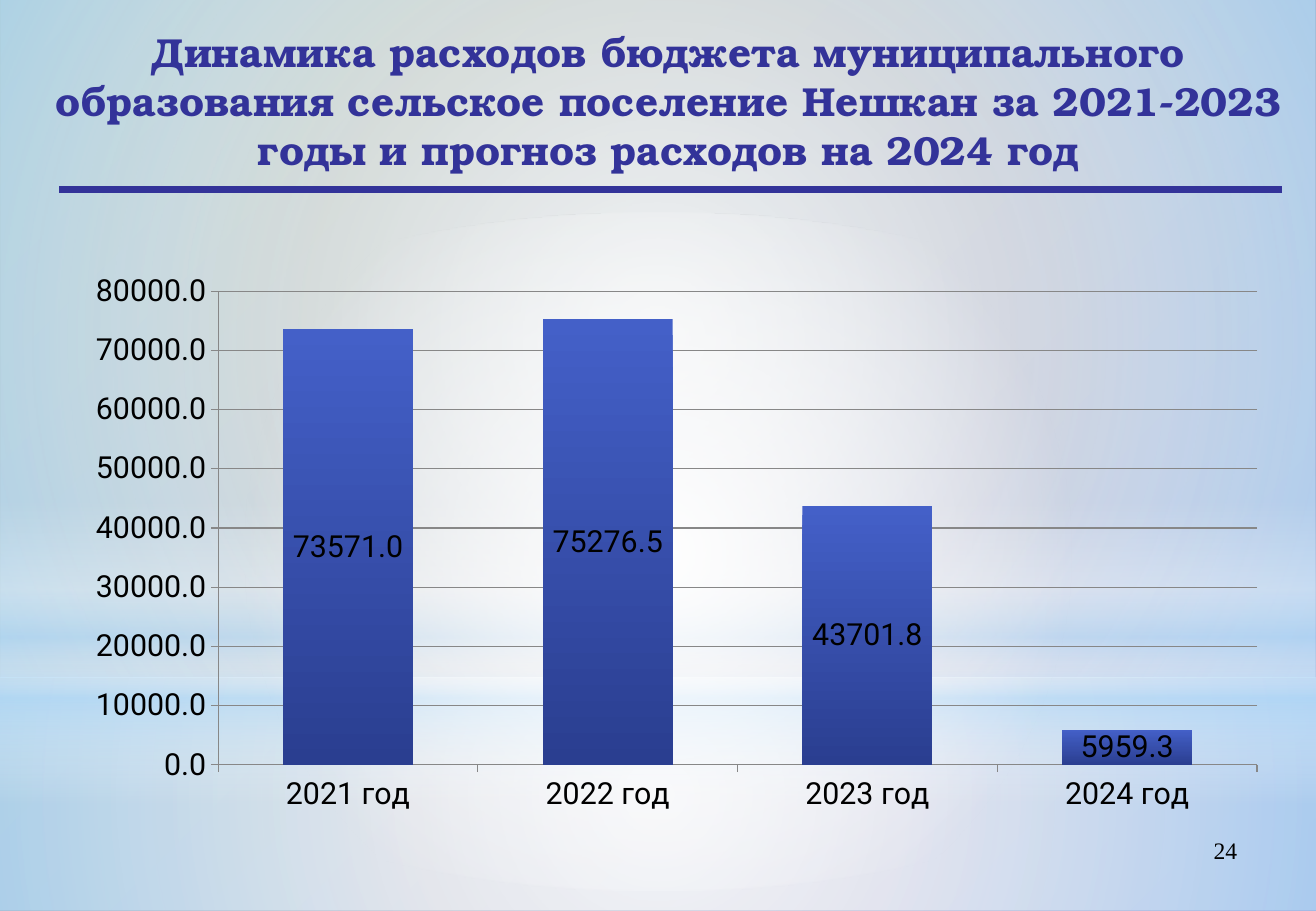
from lxml import etree
from pptx import Presentation
from pptx.chart.data import CategoryChartData
from pptx.dml.color import RGBColor
from pptx.enum.chart import XL_CHART_TYPE, XL_LABEL_POSITION, XL_TICK_MARK
from pptx.enum.shapes import MSO_CONNECTOR, MSO_SHAPE
from pptx.enum.text import MSO_ANCHOR, PP_ALIGN
from pptx.oxml import parse_xml
from pptx.oxml.ns import qn
from pptx.util import Inches, Pt

RECT, OVAL = MSO_SHAPE.RECTANGLE, MSO_SHAPE.OVAL
STRAIGHT = MSO_CONNECTOR.STRAIGHT
STACKED = XL_CHART_TYPE.COLUMN_STACKED
LABEL_CENTER = XL_LABEL_POSITION.CENTER
TICK_OUT, TICK_NONE = XL_TICK_MARK.OUTSIDE, XL_TICK_MARK.NONE
CENTER, RIGHT = PP_ALIGN.CENTER, PP_ALIGN.RIGHT
TOP, MIDDLE = MSO_ANCHOR.TOP, MSO_ANCHOR.MIDDLE

COLORS = {
    "title": "333399", "text": "000000", "grid": "878787",
    "bar_top": "4460C8", "bar_bottom": "2A3E90",
    "back_start": "96AB94", "back_end": "8488C4",
    "white": "FFFFFF", "sky": "B4DCFA",
}
RADIAL = ('<a:path path="circle"><a:fillToRect l="50000" t="50000" '
          'r="50000" b="50000"/></a:path>')
VERTICAL = '<a:lin ang="5400000" scaled="1"/>'
DRAWING_NS = "http://schemas.openxmlformats.org/drawingml/2006/main"


def rgb(name):
    return RGBColor.from_string(COLORS[name])


class BudgetSlide:
    """Holds the slide and draws its elements in one style."""

    def __init__(self, deck):
        self.slide = deck.slides.add_slide(deck.slide_layouts[6])
        self.shapes = self.slide.shapes

    def two_tone(self, fill, start, end, angle):
        fill.gradient()
        fill.gradient_angle = angle
        for stop, name in zip(fill.gradient_stops, (start, end)):
            stop.color.rgb = rgb(name)

    def glow(self, kind, box, stops, direction):
        layer = self.shapes.add_shape(kind, *map(Inches, box))
        layer.shadow.inherit = False
        layer.line.fill.background()
        layer.fill.gradient()
        stop_xml = "".join(
            f'<a:gs pos="{place * 1000}"><a:srgbClr val="{COLORS[name]}">'
            f'<a:alpha val="{opacity * 1000}"/></a:srgbClr></a:gs>'
            for place, name, opacity in stops)
        gradient = parse_xml(
            f'<a:gradFill xmlns:a="{DRAWING_NS}" rotWithShape="1">'
            f'<a:gsLst>{stop_xml}</a:gsLst>{direction}</a:gradFill>')
        default = next(layer.element.iter(qn("a:gradFill")))
        default.getparent().replace(default, gradient)

    def text(self, words, box, font, size, color, align, anchor, bold=False):
        frame = self.shapes.add_textbox(*map(Inches, box)).text_frame
        frame.word_wrap = True
        frame.vertical_anchor = anchor
        paragraph = frame.paragraphs[0]
        paragraph.alignment = align
        run = paragraph.add_run()
        run.text = words
        run.font.name, run.font.size, run.font.bold = font, Pt(size), bold
        run.font.color.rgb = rgb(color)

    def rule(self, start, end, color, weight):
        rule = self.shapes.add_connector(STRAIGHT, *map(Inches, start + end))
        rule.line.color.rgb = rgb(color)
        rule.line.width = Pt(weight)
        etree.SubElement(rule.element.spPr, qn("a:effectLst"))

    def columns(self, box, spending, plot_area):
        data = CategoryChartData(number_format="0.0")
        data.categories = list(spending)
        data.add_series("Расходы", list(spending.values()))
        chart = self.shapes.add_chart(STACKED, *map(Inches, box), data).chart
        chart.has_legend = chart.has_title = False
        chart.font.name, chart.font.size = "Roboto", Pt(18)
        chart.font.color.rgb = rgb("text")

        for axis in (chart.category_axis, chart.value_axis):
            axis.major_tick_mark = TICK_OUT
            axis.minor_tick_mark = TICK_NONE
            self.thin(axis.format.line)
        amounts = chart.value_axis
        amounts.minimum_scale, amounts.maximum_scale = 0, 80000
        amounts.major_unit = 10000
        amounts.tick_labels.number_format = "0.0"
        amounts.tick_labels.number_format_is_linked = False
        amounts.has_major_gridlines = True
        self.thin(amounts.major_gridlines.format.line)

        plot = chart.plots[0]
        plot.vary_by_categories = False
        plot.gap_width = plot.overlap = 100
        self.two_tone(plot.series[0].format.fill, "bar_top", "bar_bottom", 270)
        plot.has_data_labels = True
        labels = plot.data_labels
        labels.show_value = True
        labels.number_format, labels.number_format_is_linked = "0.0", False
        labels.position = LABEL_CENTER
        self.place_plot(amounts, plot_area)

    def thin(self, line):
        line.color.rgb = rgb("grid")
        line.width = Pt(0.75)

    def place_plot(self, axis, plot_area):
        area = next(axis.format.line.fill and axis._element.iterancestors(qn("c:plotArea")))
        for old in area.findall(qn("c:layout")):
            area.remove(old)
        layout = etree.Element(qn("c:layout"))
        area.insert(0, layout)
        manual = etree.SubElement(layout, qn("c:manualLayout"))
        settings = [("layoutTarget", "inner"), ("xMode", "edge"), ("yMode", "edge")]
        for tag, value in settings + list(zip("xywh", plot_area)):
            etree.SubElement(manual, qn(f"c:{tag}")).set("val", str(value))


def main():
    deck = Presentation()
    deck.slide_width, deck.slide_height = Inches(10.84), Inches(7.5)
    page = BudgetSlide(deck)

    page.two_tone(page.slide.background.fill, "back_start", "back_end", 315)
    page.glow(RECT, (0, 5.58, 10.84, 1.92),
              [(0, "white", 91), (37, "white", 76), (100, "sky", 79)], RADIAL)
    page.glow(RECT, (0, 0, 10.84, 5.58),
              [(0, "white", 89), (48, "white", 62), (100, "sky", 79)], RADIAL)
    page.glow(RECT, (0, 4.12, 10.84, 2.5),
              [(0, "white", 0), (29, "white", 30), (45, "sky", 40),
               (55, "white", 26), (65, "sky", 60), (100, "white", 0)], VERTICAL)
    page.glow(OVAL, (0, 1.75, 10.84, 5.58),
              [(0, "white", 100), (56, "white", 0)], RADIAL)

    page.text("24", (7.76, 6.83, 2.53, 0.52), "Times New Roman", 14, "text", RIGHT, TOP)
    page.text("Динамика расходов бюджета муниципального образования сельское "
              "поселение Нешкан за 2021-2023 годы и прогноз расходов на 2024 год",
              (0.18, 0.2, 10.65, 1.25), "TeX Gyre Bonum", 24, "title",
              CENTER, MIDDLE, bold=True)
    page.rule((0.49, 1.56), (10.56, 1.56), "title", 3.75)

    spending = {"2021 год": 73571.0, "2022 год": 75276.5,
                "2023 год": 43701.8, "2024 год": 5959.3}
    page.columns((0.63, 1.93, 9.73, 5.2), spending, (0.12, 0.09, 0.88, 0.75))
    deck.save("out.pptx")


if __name__ == "__main__":
    main()
